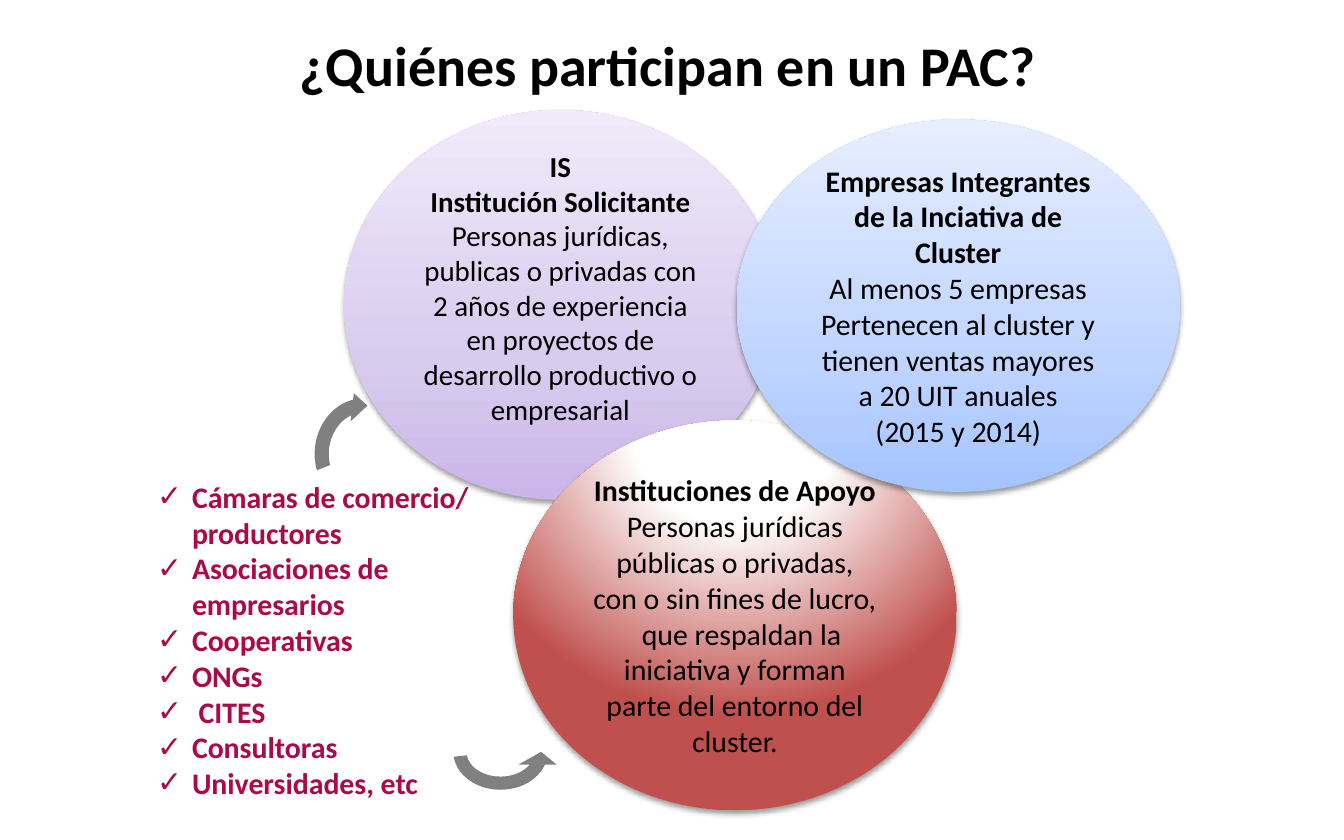
from lxml import etree
from pptx import Presentation
from pptx import util as u
from pptx.dml.color import RGBColor
from pptx.enum import shapes, text
from pptx.oxml.ns import qn

BLACK = RGBColor(0x00, 0x00, 0x00)
GRAY = RGBColor(0x80, 0x80, 0x80)
CRIMSON = RGBColor(0xAB, 0x09, 0x47)
WHITE = RGBColor(0xFF, 0xFF, 0xFF)
RED = RGBColor(0xC0, 0x50, 0x4D)
PURPLES = [RGBColor(0xC9, 0xB5, 0xE8), RGBColor(0xD8, 0xCB, 0xEE), RGBColor(0xF0, 0xEA, 0xF9)]
BLUES = [RGBColor(0xA4, 0xC4, 0xFF), RGBColor(0xBF, 0xD4, 0xFF), RGBColor(0xE6, 0xEE, 0xFF)]
REDS = [WHITE, WHITE, RED]
STOPS = (0, 35, 100)

TITLE = "¿Quiénes participan en un PAC?"
APPLICANT = [
    ("IS", True),
    ("Institución Solicitante", True),
    ("Personas jurídicas, publicas o privadas con 2 años de experiencia en proyectos "
     "de desarrollo productivo o empresarial", False),
]
SUPPORT = [
    ("Instituciones de Apoyo", True),
    ("Personas jurídicas públicas o privadas, con o sin fines de lucro,   que respaldan "
     "la iniciativa y forman parte del entorno del cluster.", False),
]
COMPANIES = [
    ("Empresas Integrantes de la Inciativa de Cluster", True),
    ("Al menos 5 empresas", False),
    ("Pertenecen al cluster y tienen ventas mayores a 20 UIT anuales", False),
    ("(2015 y 2014)", False),
]
EXAMPLES = ["Cámaras de comercio/ productores", "Asociaciones de empresarios", "Cooperativas",
            "ONGs", " CITES", "Consultoras", "Universidades, etc"]


def apply_format(target, values):
    """Set every attribute named in a dict of format values."""
    for name, value in values.items():
        setattr(target, name, value)


def add_element(parent, tag, **attributes):
    """Append a drawing element with the given attributes."""
    element = etree.SubElement(parent, qn(tag))
    for name, value in attributes.items():
        element.set(name, str(value))
    return element


def format_font(font, size, color, bold):
    """Apply the slide's typeface with a size, colour and weight."""
    apply_format(font, {"name": "Calibri", "size": u.Pt(size), "bold": bold})
    font.color.rgb = color


def fill_gradient(shape, colors, radial):
    """Fill a shape with a three-stop gradient, upward or radial."""
    shape.fill.gradient()
    gradient = shape._element.spPr.find(qn("a:gradFill"))
    for child in list(gradient):
        gradient.remove(child)
    stops = add_element(gradient, "a:gsLst")
    for position, color in zip(STOPS, colors):
        stop = add_element(stops, "a:gs", pos=position * 1000)
        add_element(stop, "a:srgbClr", val=color)
    if radial:
        circle = add_element(gradient, "a:path", path="circle")
        add_element(circle, "a:fillToRect", l=50000, t=-80000, r=50000, b=180000)
    else:
        add_element(gradient, "a:lin", ang=270 * 60000, scaled=0)


def add_soft_shadow(shape):
    """Give a shape a soft shadow that falls downward."""
    shape.shadow.inherit = False
    effects = shape._element.spPr.find(qn("a:effectLst"))
    shadow = add_element(effects, "a:outerShdw", blurRad=u.Pt(3.1), dist=u.Pt(1.6),
                         dir=90 * 60000, rotWithShape=0)
    color = add_element(shadow, "a:srgbClr", val=BLACK)
    add_element(color, "a:alpha", val=38000)


def add_circle(slide, box, colors, lines, size=16, radial=False, bottom=0.13):
    """Add one participant circle with its heading and description."""
    shape = slide.shapes.add_shape(shapes.MSO_SHAPE.OVAL, *map(u.Cm, box))
    fill_gradient(shape, colors, radial)
    shape.line.fill.background()
    add_soft_shadow(shape)
    frame = shape.text_frame
    apply_format(frame, {"word_wrap": True, "margin_bottom": u.Cm(bottom),
                         "vertical_anchor": text.MSO_ANCHOR.MIDDLE})
    for index, (line, bold) in enumerate(lines):
        paragraph = frame.add_paragraph() if index else frame.paragraphs[0]
        apply_format(paragraph, {"text": line, "alignment": text.PP_ALIGN.CENTER})
        format_font(paragraph.font, size, BLACK, bold)


def add_curved_arrow(slide, box, adjustments, rotation=0, flipped=False):
    """Add one gray curved arrow."""
    shape = slide.shapes.add_shape(shapes.MSO_SHAPE.CIRCULAR_ARROW, *map(u.Cm, box))
    for index, value in enumerate(adjustments):
        shape.adjustments[index] = value
    shape.rotation = rotation
    if flipped:
        shape._element.spPr.xfrm.set("flipV", "1")
    shape.fill.solid()
    shape.fill.fore_color.rgb = GRAY
    shape.line.fill.background()
    shape.shadow.inherit = False


def add_title(slide, left, top, width, height):
    """Place and format the slide title."""
    title = slide.shapes.title
    apply_format(title, {"left": u.Cm(left), "top": u.Cm(top),
                         "width": u.Cm(width), "height": u.Cm(height)})
    title.text_frame.text = TITLE
    paragraph = title.text_frame.paragraphs[0]
    paragraph.alignment = text.PP_ALIGN.CENTER
    format_font(paragraph.font, 30, BLACK, True)


def add_participants(slide, left, top):
    """Draw the three overlapping participant circles."""
    add_circle(slide, (left, top, 8.18, 7.37), PURPLES, APPLICANT, size=15.5, bottom=0.79)
    add_circle(slide, (left + 3.2, top + 5.87, 8.38, 7.37), REDS, SUPPORT, radial=True)
    add_circle(slide, (left + 7.42, top + 0.18, 8.38, 7.04), BLUES, COMPANIES)


def add_examples(slide, left, top):
    """Add the checked list of examples and its two arrows to the circles."""
    box = (left, top + 1.4, 7.44, 6.5)
    frame = slide.shapes.add_textbox(*map(u.Cm, box)).text_frame
    frame.word_wrap = True
    indent = u.Cm(0.66)
    for index, example in enumerate(EXAMPLES):
        paragraph = frame.add_paragraph() if index else frame.paragraphs[0]
        paragraph.text = example
        properties = paragraph._p.get_or_add_pPr()
        properties.set("marL", str(indent))
        properties.set("indent", str(-indent))
        add_element(properties, "a:buFont", typeface="Arial")
        add_element(properties, "a:buChar", char="✓")
        format_font(paragraph.font, 16, CRIMSON, True)
    add_curved_arrow(slide, (left + 2.97, top, 2.31, 2.06),
                     (0.13, 11.42, 204.58, 144.99, 0.13), rotation=276.6)
    add_curved_arrow(slide, (left + 5.61, top + 5.74, 2.26, 1.91),
                     (0.13, 11.42, 204.58, 111.55, 0.19), flipped=True)


def main():
    """Build and save the presentation."""
    presentation = Presentation()
    apply_format(presentation, {"slide_width": u.Cm(25.4), "slide_height": u.Cm(15.88)})
    slide = presentation.slides.add_slide(presentation.slide_layouts[5])
    add_title(slide, 3.1, 0.33, 19.05, 1.75)
    add_participants(slide, 6.5, 2.08)
    add_examples(slide, 2.72, 7.52)
    presentation.save("out.pptx")


if __name__ == "__main__":
    main()
